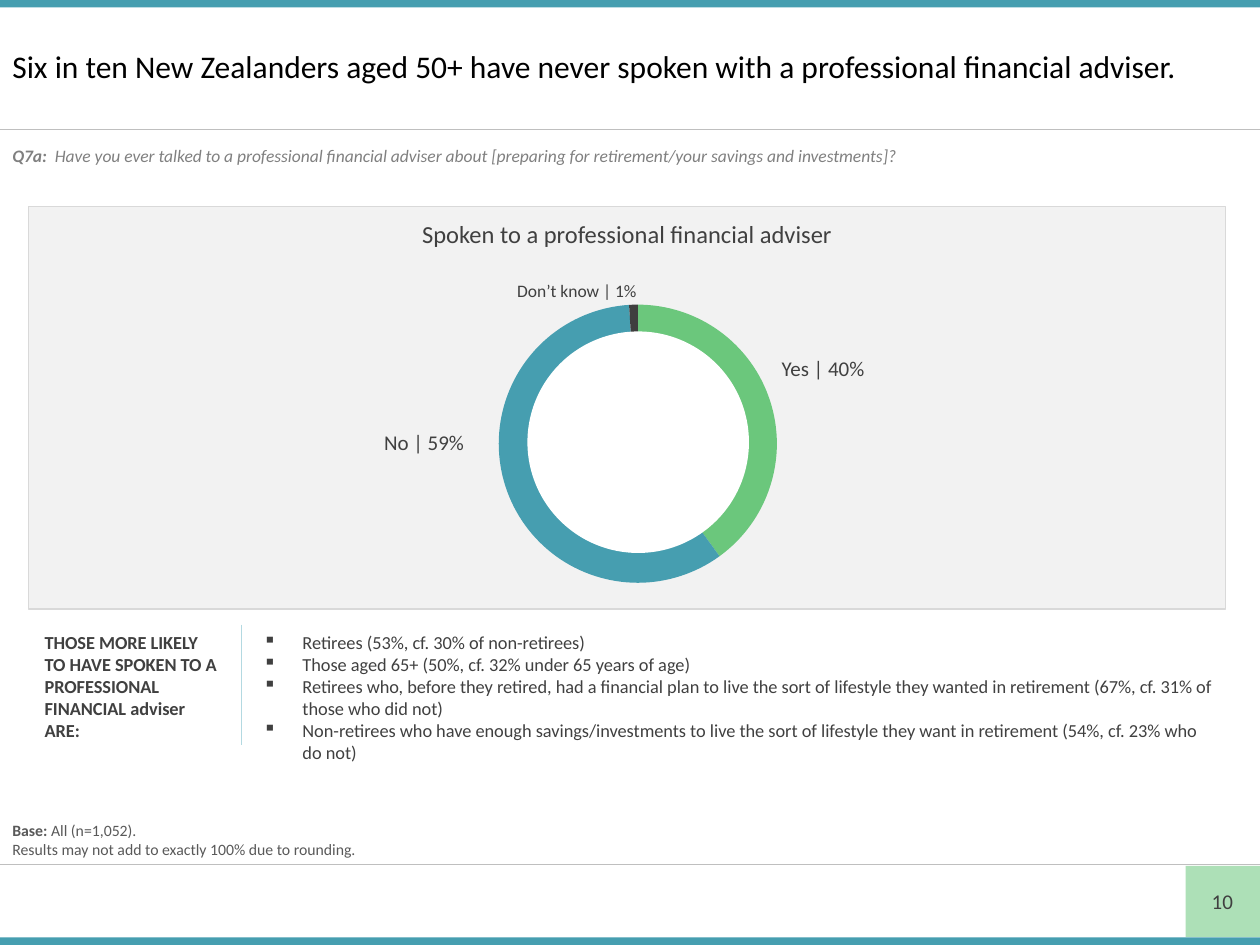
"""Build a slide on how many New Zealanders aged 50+ have spoken to a financial adviser."""
from lxml import etree
from pptx import Presentation
from pptx import util as u
from pptx.chart.data import CategoryChartData
from pptx.dml.color import RGBColor
from pptx.enum import chart as charts, shapes, text
from pptx.oxml import parse_xml
from pptx.oxml.ns import nsdecls, qn

Pt = u.Pt
LEFT, CENTER, RIGHT = text.PP_ALIGN.LEFT, text.PP_ALIGN.CENTER, text.PP_ALIGN.RIGHT
TOP, MIDDLE, BOTTOM = text.MSO_ANCHOR.TOP, text.MSO_ANCHOR.MIDDLE, text.MSO_ANCHOR.BOTTOM
TEAL, GREEN, DARK = "469EB0", "6BC77C", "404040"
color = RGBColor.from_string

prs = Presentation()
prs.slide_width, prs.slide_height = Pt(720), Pt(540)
s = prs.slides.add_slide(prs.slide_layouts[6])


def add_text(paragraphs, box, size=10.5, fill=DARK, bold=False, italic=False,
             align=LEFT, anchor=TOP, wrap=True, bullet=None, spacing=None):
    """Add a text box; each paragraph is a string or a (bold lead, rest) pair."""
    tf = s.shapes.add_textbox(*map(Pt, box)).text_frame
    tf.word_wrap, tf.vertical_anchor = wrap, anchor
    for i, content in enumerate(paragraphs):
        p = tf.paragraphs[0] if i == 0 else tf.add_paragraph()
        p.alignment = align
        if spacing:
            p.line_spacing = spacing
        if bullet:
            pPr = p._p.get_or_add_pPr()
            pPr.set("marL", str(Pt(22.5)))
            pPr.set("indent", str(Pt(-22.5)))
            etree.SubElement(pPr, qn("a:buChar")).set("char", bullet)
        runs = [(content, bold)] if isinstance(content, str) else zip(content, (True, False))
        for words, heavy in runs:
            r = p.add_run()
            r.text = words
            r.font.name, r.font.size = "Calibri", Pt(size)
            r.font.bold, r.font.italic = heavy, italic
            r.font.color.rgb = color(fill)


def add_block(box, fill, kind=shapes.MSO_SHAPE.RECTANGLE, line=None):
    """Add a filled shape without shadow, outlined only when a line colour is given."""
    sp = s.shapes.add_shape(kind, *map(Pt, box))
    sp.shadow.inherit = False
    sp.fill.solid()
    sp.fill.fore_color.rgb = color(fill)
    if line:
        sp.line.color.rgb, sp.line.width = color(line), Pt(0.75)
    else:
        sp.line.fill.background()
    return sp


for top in (0, 535.7):
    add_block((0, top, 720, 4.3), TEAL)

for x1, y1, x2, y2, shade in (
    (0, 74, 720, 74, "BFBFBF"),
    (0, 494, 720, 494, "BFBFBF"),
    (138, 357, 138, 426, "B3D9E1"),
):
    line = s.shapes.add_connector(shapes.MSO_CONNECTOR.STRAIGHT, Pt(x1), Pt(y1), Pt(x2), Pt(y2))
    line.line.color.rgb, line.line.width = color(shade), Pt(0.5)
    etree.SubElement(line._element.spPr, qn("a:effectLst"))

badge = add_block((677.5, 494.8, 42.5, 40.6), GREEN)
tint = badge._element.spPr.find(qn("a:solidFill"))[0]
etree.SubElement(tint, qn("a:alpha")).set("val", "55000")
add_text(["10"], (684, 504, 29, 21.8), size=12, align=CENTER, wrap=False)

add_text(["Six in ten New Zealanders aged 50+ have never spoken with a professional financial adviser."],
         (0, 8.8, 693, 61), size=18, fill="000000", anchor=MIDDLE, spacing=0.9)
add_text([("Q7a:  ", "Have you ever talked to a professional financial adviser about "
           "[preparing for retirement/your savings and investments]?")],
         (0, 79.5, 720, 19.4), size=10, fill="808080", italic=True)

add_block((16.4, 118, 684, 230), "F2F2F2", line="D9D9D9")
add_text(["Spoken to a professional financial adviser"], (16.4, 121.8, 684, 24.2), size=14, align=CENTER)

data = CategoryChartData()
data.categories = ["1", "2", "3"]
data.add_series("Series 1", (40, 59, 1))
chart = s.shapes.add_chart(charts.XL_CHART_TYPE.DOUGHNUT, Pt(232), Pt(162.7), Pt(265), Pt(180), data).chart
chart.has_legend = chart.has_title = False
chart.font.name, chart.font.size = "Calibri", Pt(10)
chart.font.color.rgb = color("000000")
plot = chart.plots[0]
plot.vary_by_categories = True
for i, shade in enumerate((GREEN, TEAL, "3F3F3F")):
    point = plot.series[0].points[i].format
    point.fill.solid()
    point.fill.fore_color.rgb = color(shade)
    point.line.fill.background()
plot._element.find(qn("c:holeSize")).set("val", "80")
area = chart._chartSpace.chart.plotArea
for old in area.findall(qn("c:layout")):
    area.remove(old)
frame = "".join(f'<c:{tag} val="{val}"/>' for tag, val in (
    ("layoutTarget", "inner"), ("xMode", "edge"), ("yMode", "edge"),
    ("x", 0.2), ("y", 0.06), ("w", 0.6), ("h", 0.89)))
area.insert(0, parse_xml(f'<c:layout {nsdecls("c")}><c:manualLayout>{frame}</c:manualLayout></c:layout>'))

add_block((301.4, 189.4, 126.6, 126.6), "FFFFFF", kind=shapes.MSO_SHAPE.OVAL)
for label, box, size, align in (
    ("Yes | 40%", (439.6, 199.8, 65.5, 21.8), 12, LEFT),
    ("No | 59% ", (211.7, 242, 64, 21.8), 12, CENTER),
    ("Don’t know | 1% ", (287.5, 156.5, 85.5, 19.4), 10, RIGHT),
):
    add_text([label], box, size=size, align=align, wrap=False)

add_text(["THOSE MORE LIKELY TO HAVE SPOKEN TO A PROFESSIONAL FINANCIAL adviser ARE:"],
         (18.4, 357, 114.5, 70.6), bold=True)
add_text([
    "Retirees (53%, cf. 30% of non-retirees)",
    "Those aged 65+ (50%, cf. 32% under 65 years of age)",
    "Retirees who, before they retired, had a financial plan to live the sort of lifestyle "
    "they wanted in retirement (67%, cf. 31% of those who did not)",
    "Non-retirees who have enough savings/investments to live the sort of lifestyle "
    "they want in retirement (54%, cf. 23% who do not)",
], (143.3, 357, 557.3, 83.5), bullet="▪")
add_text([("Base: ", "All (n=1,052)."), "Results may not add to exactly 100% due to rounding."],
         (0, 465, 720, 29), size=9, fill="595959", anchor=BOTTOM)

prs.save("out.pptx")
